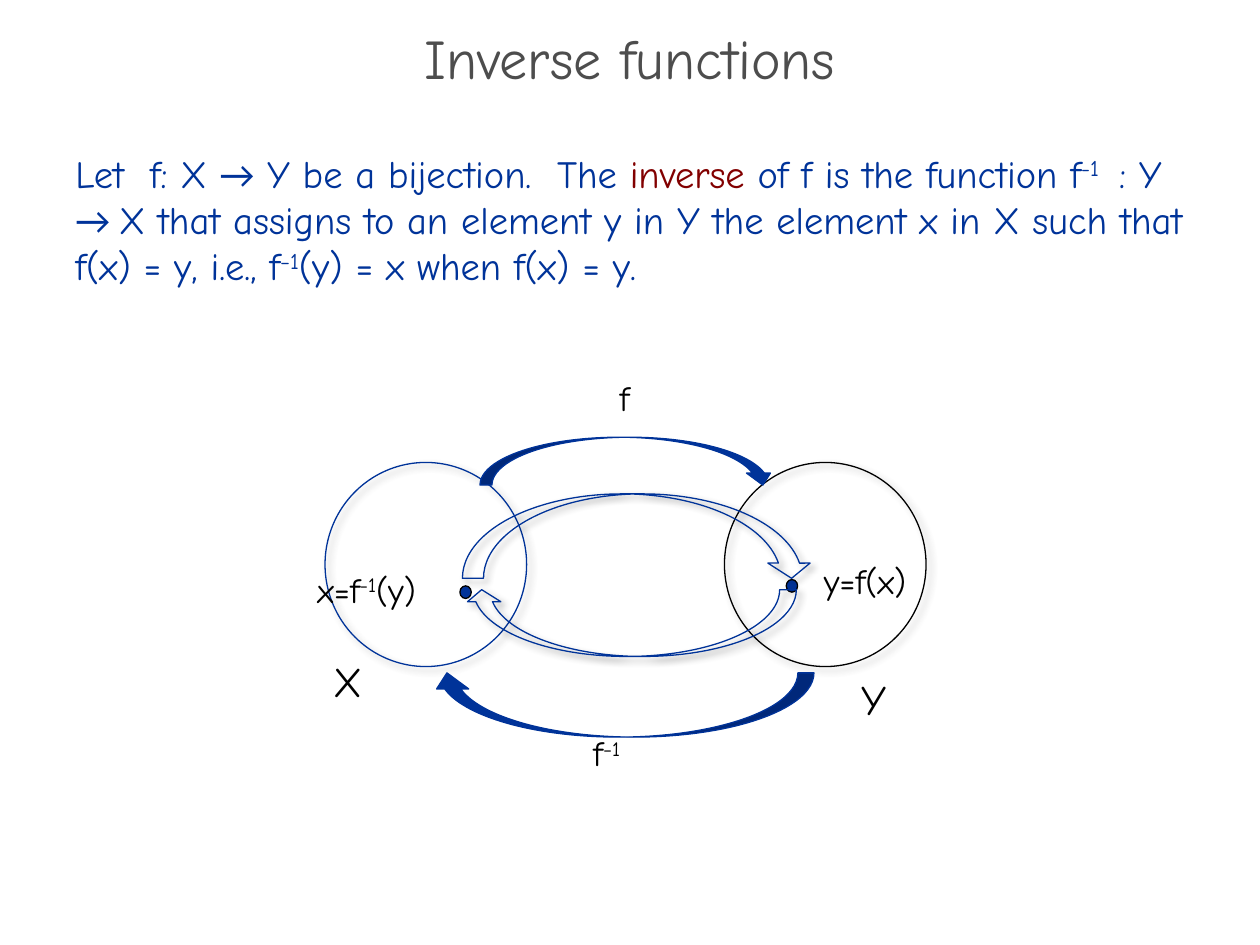
from lxml import etree
from pptx import Presentation
from pptx import util as u
from pptx.dml import color as dml
from pptx.enum import shapes, text
from pptx.oxml import ns

BLUE, BLACK, GREY, RED = "003399", "000000", "4D4D4D", "820000"


def rgb(value):
    return dml.RGBColor.from_string(value)


def write(paragraph, words, size=20, color=BLACK, font="Comic Neue", raised=False):
    run = paragraph.add_run()
    run.text = words
    run.font.size = u.Pt(size)
    run.font.name = font
    run.font.color.rgb = rgb(color)
    if raised:
        run.font._element.set("baseline", "30000")


def cast_shadow(shape, color):
    effects = shape.element.spPr.find(ns.qn("a:effectLst"))
    shadow = etree.SubElement(
        effects, ns.qn("a:outerShdw"), blurRad=str(u.Pt(4)), dist=str(u.Pt(3)),
        dir="2700000", algn="ctr", rotWithShape="0")
    tint = etree.SubElement(shadow, ns.qn("a:srgbClr"), val=color)
    etree.SubElement(tint, ns.qn("a:alpha"), val="43000")


class Deck:
    def __init__(self):
        self.presentation = Presentation()
        self.presentation.slide_width = u.Inches(10)
        self.presentation.slide_height = u.Inches(7.5)
        self.slide = self.presentation.slides.add_slide(
            self.presentation.slide_layouts[5])

    def title(self, words, *box):
        heading = self.slide.shapes.title
        heading.left, heading.top, heading.width, heading.height = map(u.Inches, box)
        frame = heading.text_frame
        frame.auto_size = text.MSO_AUTO_SIZE.NONE
        frame.vertical_anchor = text.MSO_ANCHOR.MIDDLE
        paragraph = frame.paragraphs[0]
        paragraph.alignment = text.PP_ALIGN.CENTER
        paragraph.line_spacing = 0.7
        write(paragraph, words, size=32, color=GREY)

    def text(self, runs, *box, wrap=False, **style):
        frame = self.slide.shapes.add_textbox(*map(u.Inches, box)).text_frame
        frame.word_wrap = wrap
        if not wrap:
            frame.auto_size = text.MSO_AUTO_SIZE.SHAPE_TO_FIT_TEXT
        paragraph = frame.paragraphs[0]
        for words, changes in runs:
            write(paragraph, words, **{**style, **changes})
        return paragraph

    def shape(self, kind, *box, fill=None, line=BLUE, shadow=None):
        shape = self.slide.shapes.add_shape(kind, *map(u.Inches, box))
        shape.shadow.inherit = False
        if fill:
            shape.fill.solid()
            shape.fill.fore_color.rgb = rgb(fill)
        else:
            shape.fill.background()
        shape.line.color.rgb = rgb(line)
        shape.line.width = u.Pt(0.75)
        if shadow:
            cast_shadow(shape, shadow)
        return shape

    def oval(self, *box, **style):
        return self.shape(shapes.MSO_SHAPE.OVAL, *box, **style)

    def arrow(self, *box, back=False, head=0.25, **style):
        arrow = self.shape(shapes.MSO_SHAPE.CURVED_DOWN_ARROW, *box, **style)
        arrow.adjustments[2] = head
        if back:
            arrow.rotation = 180


def main():
    deck = Deck()
    raised, calibri = {"raised": True}, {"font": "Calibri"}

    deck.title("Inverse functions", 0, 0.27, 10, 0.5)
    definition = deck.text([
        ("Let  f: X ", {}), ("→", calibri),
        (" Y be a bijection.  The ", {}), ("inverse", {"color": RED}),
        (" of f is the function f", {}), ("-1 ", raised),
        (" : Y ", {}), ("→ ", calibri),
        ("X that assigns to an element y in Y the element x in X "
         "such that f(x) = y, i.e., f", {}),
        ("−1", raised), ("(y) = x when f(x) = y.", {}),
    ], 0.5, 1.14, 9, 4.95, wrap=True, size=22, color=BLUE)
    definition.space_after = u.Pt(6)

    for left, outline in ((2.58, BLUE), (5.75, BLACK)):
        deck.oval(left, 3.67, 1.6, 1.62, line=outline, shadow="4C4C4C")

    deck.arrow(3.81, 3.47, 2.34, 0.38, fill=BLUE)
    deck.arrow(3.42, 5.34, 3.04, 0.51, fill=BLUE, back=True)

    for left, top in ((6.24, 4.6), (3.65, 4.65)):
        deck.oval(left, top, 0.09, 0.1, fill=BLUE, line=BLACK)

    deck.text([("X", {})], 2.55, 5.15, 0.45, 0.5, size=24)
    deck.text([("Y", {})], 6.74, 5.3, 0.42, 0.5, size=24)
    deck.text([("f", {})], 4.82, 2.94, 0.34, 0.44)
    deck.text([("f", {}), ("−1", raised)], 4.61, 5.76, 0.52, 0.44)
    deck.text([("x=f", {}), ("-1", raised), ("(y)", {})], 2.42, 4.46, 1.17, 0.44)
    deck.text([("y=f(x)", {})], 6.44, 4.39, 1, 0.44)

    deck.arrow(3.67, 3.92, 2.78, 0.67, head=0.18, shadow=BLACK)
    deck.arrow(3.69, 4.68, 2.63, 0.53, head=0.18, shadow=BLACK, back=True)

    deck.presentation.save("out.pptx")


if __name__ == "__main__":
    main()
